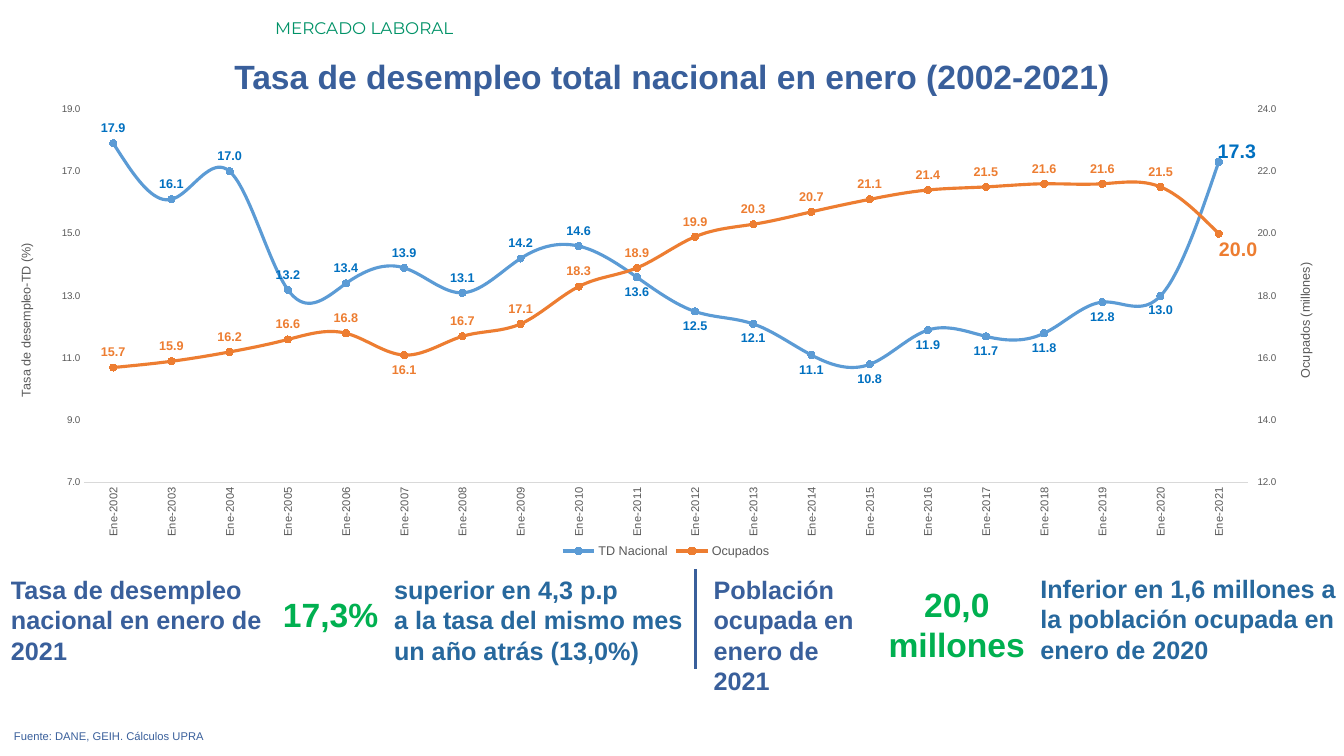
"""Slide on the January unemployment rate and the employed population, 2002-2021."""
from copy import deepcopy

from lxml import etree
from pptx import Presentation
from pptx.chart.axis import ValueAxis
from pptx.chart.data import CategoryChartData
from pptx.dml.color import RGBColor
from pptx.enum.chart import (XL_CHART_TYPE, XL_LABEL_POSITION, XL_LEGEND_POSITION,
                             XL_MARKER_STYLE, XL_TICK_MARK)
from pptx.enum.shapes import MSO_CONNECTOR
from pptx.enum.text import MSO_AUTO_SIZE, PP_ALIGN
from pptx.oxml.ns import qn
from pptx.util import Inches, Pt

LEFT, CENTER, RIGHT, JUSTIFY = PP_ALIGN.LEFT, PP_ALIGN.CENTER, PP_ALIGN.RIGHT, PP_ALIGN.JUSTIFY
ABOVE, BELOW = XL_LABEL_POSITION.ABOVE, XL_LABEL_POSITION.BELOW
NO_TICK, TICK_OUT = XL_TICK_MARK.NONE, XL_TICK_MARK.OUTSIDE

NAVY = RGBColor(0x39, 0x5F, 0x9B)
TEAL = RGBColor(0x27, 0x68, 0x9D)
GREEN = RGBColor(0x00, 0xB0, 0x50)
SECTION_GREEN = RGBColor(0x00, 0x92, 0x67)
GREY = RGBColor(0x59, 0x59, 0x59)
PALE_GREY = RGBColor(0xD9, 0xD9, 0xD9)
BLUE = RGBColor(0x5B, 0x9B, 0xD5)
LABEL_BLUE = RGBColor(0x00, 0x70, 0xC0)
ORANGE = RGBColor(0xED, 0x7D, 0x31)

STATEMENT = dict(size=18, bold=True)
FIGURE = dict(size=24, bold=True, color=GREEN)

# Areas are left, top, width and height in percent of the slide.
TEXTS = [
    ("MERCADO LABORAL", (19.73, 1.73, 80.27, 4),
     dict(size=12, color=SECTION_GREEN, font="Montserrat")),
    ("Tasa de desempleo total nacional en enero (2002-2021)", (0, 6.67, 100, 6.67),
     dict(size=24, bold=True, align=CENTER)),
    ("Tasa de desempleo nacional en enero de 2021", (0.08, 75.33, 21.3, 13.47), STATEMENT),
    ("17,3%", (19.73, 77.87, 9.15, 6.67), dict(FIGURE, align=RIGHT)),
    ("superior en 4,3 p.p\na la tasa del mismo mes un año atrás (13,0%)",
     (28.58, 75.33, 23.03, 13.47), dict(STATEMENT, color=TEAL)),
    ("Población ocupada en enero de 2021", (52.36, 75.33, 13.73, 17.47), STATEMENT),
    ("20,0 millones", (65.19, 76.53, 12, 12.13), dict(FIGURE, align=CENTER)),
    ("Inferior en 1,6 millones a la población ocupada en enero de 2020",
     (76.67, 75.2, 24.16, 13.47), dict(STATEMENT, color=TEAL)),
    ("Fuente: DANE, GEIH. Cálculos UPRA", (0.3, 95.87, 96.85, 3.2),
     dict(size=8, align=JUSTIFY)),
]
DIVIDER = (51.76, 75.33, 0, 13.2)
CHART_AREA = (1.13, 12.13, 96.85, 62.27)
PLOT_SHARES = dict(x=0.053, y=0.037, w=0.894, h=0.794)

MONTHS = [f"Ene-{year}" for year in range(2002, 2022)]
LAST = len(MONTHS) - 1
SERIES = [
    dict(name="TD Nacional", color=BLUE, label_color=LABEL_BLUE, below=range(9, LAST),
         last_position=ABOVE, last_shift=(0.014, 0.018),
         values=[17.9, 16.1, 17, 13.2, 13.4, 13.9, 13.1, 14.2, 14.6, 13.6,
                 12.5, 12.1, 11.1, 10.8, 11.9, 11.7, 11.8, 12.8, 13, 17.3]),
    dict(name="Ocupados", color=ORANGE, label_color=ORANGE, below=[5],
         last_position=BELOW, last_shift=(0.015, -0.005),
         values=[15.7, 15.9, 16.2, 16.6, 16.8, 16.1, 16.7, 17.1, 18.3, 18.9,
                 19.9, 20.3, 20.7, 21.1, 21.4, 21.5, 21.6, 21.6, 21.5, 20]),
]

deck = Presentation()
deck.slide_width, deck.slide_height = Inches(13.33), Inches(7.5)
slide = deck.slides.add_slide(deck.slide_layouts[6])


def place(area):
    sides = (deck.slide_width, deck.slide_height) * 2
    return [int(side * share / 100) for side, share in zip(sides, area)]


def set_font(font, size, color=GREY, bold=False, name="Arial"):
    font.size, font.bold, font.name = Pt(size), bold, name
    font.color.rgb = color


def add_text(text, area, size, color=NAVY, bold=False, font="Arial", align=LEFT):
    frame = slide.shapes.add_textbox(*place(area)).text_frame
    frame.word_wrap = True
    frame.auto_size = MSO_AUTO_SIZE.SHAPE_TO_FIT_TEXT
    frame.text = text
    for paragraph in frame.paragraphs:
        paragraph.alignment = align
        set_font(paragraph.runs[0].font, size, color, bold, font)


def manual_layout(**parts):
    layout = etree.Element(qn("c:layout"))
    manual = etree.SubElement(layout, qn("c:manualLayout"))
    for tag, value in parts.items():
        etree.SubElement(manual, qn(f"c:{tag}")).set("val", str(value))
    return layout


def style_value_axis(axis, title, low, high, tick):
    axis.minimum_scale, axis.maximum_scale, axis.major_unit = low, high, 2
    axis.has_major_gridlines = False
    axis.major_tick_mark, axis.minor_tick_mark = tick, NO_TICK
    axis.format.line.fill.background()
    axis.tick_labels.number_format = "0.0"
    axis.tick_labels.number_format_is_linked = False
    set_font(axis.tick_labels.font, 7)
    axis.axis_title.text_frame.text = title
    set_font(axis.axis_title.text_frame.paragraphs[0].runs[0].font, 9)


def style_series(series, look):
    series.smooth = True
    series.format.line.color.rgb = look["color"]
    series.format.line.width = Pt(2.25)
    series.marker.style, series.marker.size = XL_MARKER_STYLE.CIRCLE, 5
    series.marker.format.fill.solid()
    series.marker.format.fill.fore_color.rgb = look["color"]
    series.marker.format.line.color.rgb = look["color"]
    labels = series.data_labels
    labels.show_value, labels.position = True, ABOVE
    labels.number_format, labels.number_format_is_linked = "0.0", False
    set_font(labels.font, 9, look["label_color"], True)
    special = [(index, BELOW, 9) for index in look["below"]]
    for index, position, size in special + [(LAST, look["last_position"], 14)]:
        label = series.points[index].data_label
        set_font(label.font, size, look["label_color"], True)
        label.position = position
    shift_x, shift_y = look["last_shift"]
    for index_mark in labels._element.iter(qn("c:idx")):
        if index_mark.get("val") == str(LAST):
            index_mark.addnext(manual_layout(x=shift_x, y=shift_y))


def move_to_right_axis(chart, series):
    left_plot = chart.plots[0]._element
    left_value, months = chart.value_axis._element, chart.category_axis._element
    right_plot, right_value, hidden_months = map(deepcopy, (left_plot, left_value, months))
    for old in right_plot.findall(qn("c:ser")):
        right_plot.remove(old)
    right_plot.find(qn("c:varyColors")).addnext(series._element)
    left_plot.addnext(right_plot)
    left_value.addnext(right_value)
    right_value.addnext(hidden_months)
    new_ids = {months.find(qn("c:axId")).get("val"): "50010",
               left_value.find(qn("c:axId")).get("val"): "50020"}
    for part in (right_plot, right_value, hidden_months):
        for tag in ("c:axId", "c:crossAx"):
            for mark in part.findall(qn(tag)):
                mark.set("val", new_ids[mark.get("val")])
    hidden_months.find(qn("c:delete")).set("val", "1")
    right_value.find(qn("c:axPos")).set("val", "r")
    right_value.find(qn("c:crosses")).set("val", "max")
    return ValueAxis(right_value)


def add_rate_chart():
    chart_data = CategoryChartData(number_format="0.0")
    chart_data.categories = MONTHS
    for look in SERIES:
        chart_data.add_series(look["name"], look["values"])
    chart = slide.shapes.add_chart(XL_CHART_TYPE.LINE_MARKERS, *place(CHART_AREA),
                                   chart_data).chart
    set_font(chart.font, 10)
    chart.has_title = False
    chart.has_legend = True
    chart.legend.position = XL_LEGEND_POSITION.BOTTOM
    chart.legend.include_in_layout = False
    set_font(chart.legend.font, 9)
    chart.plots[0].vary_by_categories = False

    months = chart.category_axis
    months.major_tick_mark = months.minor_tick_mark = NO_TICK
    months.format.line.color.rgb, months.format.line.width = PALE_GREY, Pt(0.75)
    set_font(months.tick_labels.font, 8)
    turned = months._element.find(qn("c:txPr")).find(qn("a:bodyPr"))
    turned.set("rot", "-5400000")
    turned.set("vert", "horz")

    rate, employed = chart.plots[0].series
    for series, look in zip((rate, employed), SERIES):
        style_series(series, look)
    style_value_axis(chart.value_axis, "Tasa de desempleo-TD (%)", 7, 19, NO_TICK)
    right_axis = move_to_right_axis(chart, employed)
    style_value_axis(right_axis, "Ocupados (millones)", 12, 24, TICK_OUT)

    plot_area = chart._chartSpace.chart.plotArea
    for old in plot_area.findall(qn("c:layout")):
        plot_area.remove(old)
    plot_area.insert(0, manual_layout(layoutTarget="inner", xMode="edge", yMode="edge",
                                      **PLOT_SHARES))


def add_divider():
    x, top, width, height = place(DIVIDER)
    line = slide.shapes.add_connector(MSO_CONNECTOR.STRAIGHT, x, top, x + width, top + height)
    line.line.color.rgb, line.line.width = NAVY, Pt(2.25)
    etree.SubElement(line._element.spPr, qn("a:effectLst"))


if __name__ == "__main__":
    add_rate_chart()
    add_divider()
    for text, area, style in TEXTS:
        add_text(text, area, **style)
    deck.save("out.pptx")
